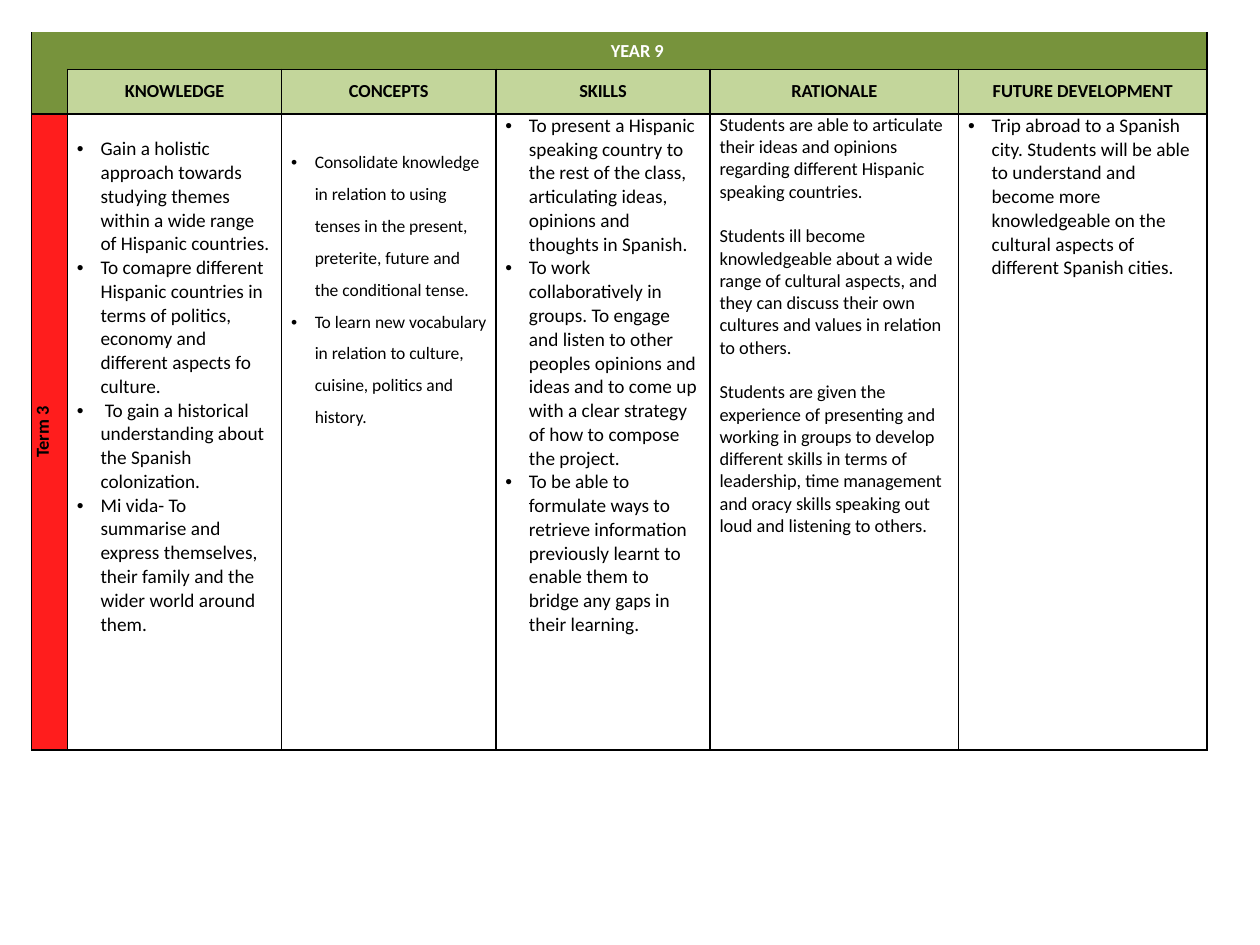
from dataclasses import dataclass

from lxml import etree
from pptx import Presentation
from pptx.dml.color import RGBColor
from pptx.enum.text import MSO_ANCHOR, PP_ALIGN
from pptx.oxml.ns import qn
from pptx.util import Pt

MIDDLE = MSO_ANCHOR.MIDDLE
TOP = MSO_ANCHOR.TOP
CENTER = PP_ALIGN.CENTER
LEFT = PP_ALIGN.LEFT

BLACK = RGBColor(0x00, 0x00, 0x00)
WHITE = RGBColor(0xFF, 0xFF, 0xFF)
DARK_GREEN = RGBColor(0x77, 0x93, 0x3C)
LIGHT_GREEN = RGBColor(0xC3, 0xD6, 0x9B)
RED = RGBColor(0xFF, 0x1D, 0x1D)

FONT = "Calibri"
HEADING_SIZE = 10.5
MARGIN = 5.4
INDENT = 13.5
TERM_WIDTH = 20.6
ROW_HEIGHTS = (21.4, 25.4, 363.6)


@dataclass
class Column:
    title: str
    width: float
    texts: tuple[str, ...]
    size: float = 11
    bullets: bool = True
    line_spacing: float = 1.0
    top: float = 0
    gap: float = 0


COLUMNS = (
    Column("KNOWLEDGE", 122.4, (
        "Gain a holistic approach towards studying themes within a wide range of Hispanic countries.",
        "To comapre different Hispanic countries in terms of politics, economy and different aspects fo culture.",
        " To gain a historical understanding about the Spanish colonization.",
        "Mi vida- To summarise and express themselves, their family and the wider world around them.",
    ), top=13.4),
    Column("CONCEPTS", 122.4, (
        "Consolidate knowledge in relation to using tenses in the present, preterite, future and the conditional tense.",
        "To learn new vocabulary in relation to culture, cuisine, politics and history.",
    ), size=10, line_spacing=1.5, top=15.9),
    Column("SKILLS", 122.4, (
        "To present a Hispanic speaking country to the rest of the class, articulating ideas, "
        "opinions and thoughts in Spanish.",
        "To work collaboratively in groups. To engage and listen to other peoples opinions and ideas "
        "and to come up with a clear strategy of how to compose the project.",
        "To be able to formulate ways to retrieve information previously learnt to enable them "
        "to bridge any gaps in their learning.",
    )),
    Column("RATIONALE", 142, (
        "Students are able to articulate their ideas and opinions regarding different Hispanic speaking countries.",
        "Students ill become knowledgeable about a wide range of cultural aspects, and they can discuss "
        "their own cultures and values in relation to others.",
        "Students are given the experience of presenting and working in groups to develop different skills "
        "in terms of leadership, time management and oracy skills speaking out loud and listening to others.",
    ), size=10.5, bullets=False, gap=12.8),
    Column("FUTURE DEVELOPMENT", 142, (
        "Trip abroad to a Spanish city. Students will be able to understand and become more knowledgeable "
        "on the cultural aspects of different Spanish cities.",
    )),
)


def style_cell(cell, fill: RGBColor, sides: str = "LRTB", anchor=MIDDLE, top: float = 0) -> None:
    tcPr = cell._tc.get_or_add_tcPr()
    for side in "LRTB":
        ln = etree.SubElement(tcPr, qn(f"a:ln{side}"), w=str(Pt(1)))
        if side in sides:
            color = etree.SubElement(ln, qn("a:solidFill"))
            etree.SubElement(color, qn("a:srgbClr"), val=str(BLACK))
        else:
            etree.SubElement(ln, qn("a:noFill"))
    cell.fill.solid()
    cell.fill.fore_color.rgb = fill
    cell.vertical_anchor = anchor
    cell.margin_left = cell.margin_right = Pt(MARGIN)
    cell.margin_top, cell.margin_bottom = Pt(top), Pt(0)


def format_paragraph(p, size: float, color: RGBColor = BLACK, bold: bool = False, align=LEFT) -> None:
    p.alignment = align
    for r in p.runs:
        r.font.name = FONT
        r.font.size = Pt(size)
        r.font.bold = bold
        r.font.color.rgb = color


def write_heading(cell, text: str, color: RGBColor = BLACK) -> None:
    cell.text_frame.text = text
    format_paragraph(cell.text_frame.paragraphs[0], HEADING_SIZE, color, True, CENTER)


def add_bullet(p) -> None:
    pPr = p._p.get_or_add_pPr()
    pPr.set("marL", str(Pt(INDENT)))
    pPr.set("indent", str(-Pt(INDENT)))
    etree.SubElement(pPr, qn("a:buFont"), typeface="Arial")
    etree.SubElement(pPr, qn("a:buChar"), char="•")


def write_body(cell, column: Column) -> None:
    tf = cell.text_frame
    for i, text in enumerate(column.texts):
        p = tf.add_paragraph() if i else tf.paragraphs[0]
        p.text = text
        format_paragraph(p, column.size)
        p.line_spacing = column.line_spacing
        p.space_before = Pt(column.gap if i else 0)
        if column.bullets:
            add_bullet(p)


def main() -> None:
    prs = Presentation()
    prs.slide_width, prs.slide_height = Pt(720), Pt(540)
    s = prs.slides.add_slide(prs.slide_layouts[6])

    widths = [TERM_WIDTH] + [column.width for column in COLUMNS]
    table = s.shapes.add_table(
        len(ROW_HEIGHTS), len(widths), Pt(18), Pt(18.3), Pt(sum(widths)), Pt(sum(ROW_HEIGHTS))
    ).table
    table.first_row = table.horz_banding = False
    for col, width in zip(table.columns, widths):
        col.width = Pt(width)
    for row, height in zip(table.rows, ROW_HEIGHTS):
        row.height = Pt(height)

    last = len(COLUMNS)
    table.cell(0, 0).merge(table.cell(1, 0))
    table.cell(0, 1).merge(table.cell(0, last))
    style_cell(table.cell(0, 0), DARK_GREEN, "LB")
    style_cell(table.cell(1, 0), DARK_GREEN, "LB")
    for i in range(1, last + 1):
        style_cell(table.cell(0, i), DARK_GREEN, "RB" if i in (1, last) else "B")
    write_heading(table.cell(0, 1), "YEAR 9", WHITE)

    term = table.cell(2, 0)
    style_cell(term, RED)
    write_heading(term, "Term 3")
    term._tc.get_or_add_tcPr().set("vert", "vert270")

    for i, column in enumerate(COLUMNS, 1):
        style_cell(table.cell(1, i), LIGHT_GREEN)
        write_heading(table.cell(1, i), column.title)
        style_cell(table.cell(2, i), WHITE, anchor=TOP, top=column.top)
        write_body(table.cell(2, i), column)

    prs.save("out.pptx")


if __name__ == "__main__":
    main()
